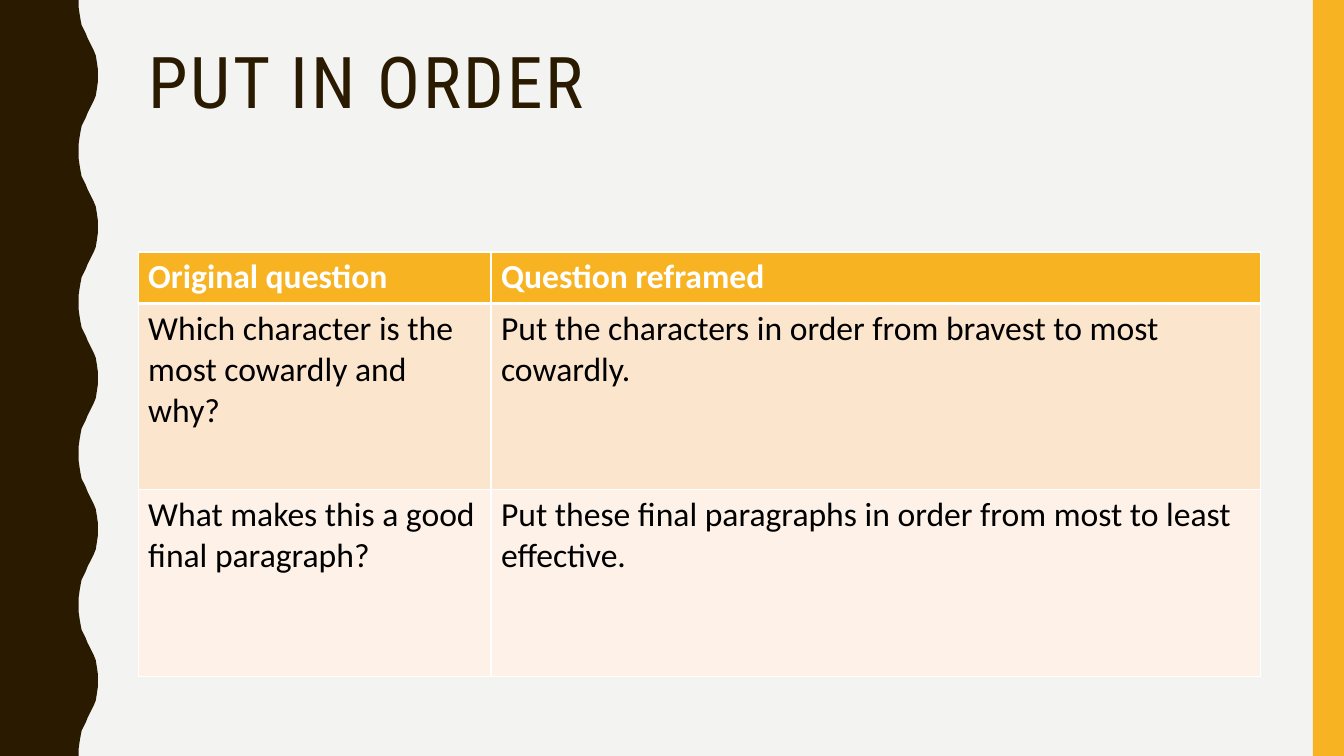
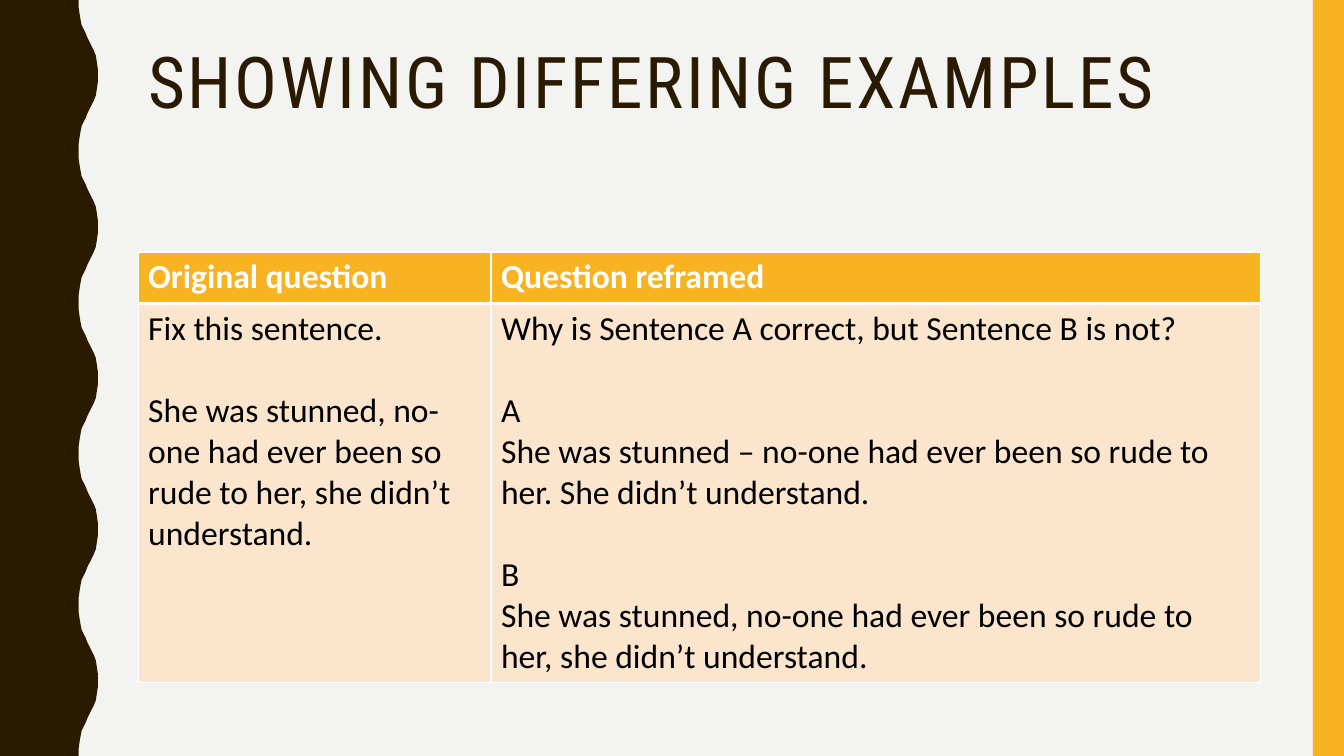
from lxml import etree
from pptx import Presentation, util as u
from pptx.dml.color import RGBColor
from pptx.enum import shapes, text
from pptx.oxml import ns

PX = 9144
WIDTH, HEIGHT = 1333, 750
LEFT, CONTENT_WIDTH = 137, 1113

BROWN = RGBColor(0x2A, 0x1A, 0x00)
AMBER = RGBColor(0xF8, 0xB3, 0x23)
PAPER = RGBColor(0xF3, 0xF3, 0xF2)
PEACH = RGBColor(0xFC, 0xE5, 0xCD)
CREAM = RGBColor(0xFE, 0xF2, 0xE8)
WHITE = RGBColor(0xFF, 0xFF, 0xFF)
BLACK = RGBColor(0x00, 0x00, 0x00)

TITLE_FONT, BODY_FONT = "Roboto Condensed", "Calibri"
GROUP_GAP = 29.3
COLUMN_WIDTHS = [350, 763]
HEADER_HEIGHT = 51
ROW_FILLS = [AMBER, PEACH, CREAM]
HEADER = [[["Original question"]], [["Question reframed"]]]

WAVE_PERIOD = 150
SWELL = [(78, 0), (78, 7), (79, 14), (80, 20), (81, 25), (83, 29), (85, 33), (87, 38),
         (89, 42), (91, 46), (93, 50), (95, 55), (96, 61), (97, 68), (97, 75)]
WAVE = SWELL + [(x, WAVE_PERIOD - y) for x, y in reversed(SWELL[:-1])]
EDGE = [(x, y + top) for top in range(0, HEIGHT, WAVE_PERIOD) for x, y in WAVE]

SLIDES = [
    ("PUT IN ORDER", 185, [
        [[["Which character is the most cowardly and why?"]],
         [["Put the characters in order from bravest to most cowardly."]]],
        [[["What makes this a good final paragraph?"]],
         [["Put these final paragraphs in order from most to least effective."]]],
    ]),
    ("SHOWING DIFFERING EXAMPLES", 376, [
        [[["Fix this sentence."],
          ["She was stunned, no-one had ever been so rude to her, she didn’t understand."]],
         [["Why is Sentence A correct, but Sentence B is not?"],
          ["A", "She was stunned – no-one had ever been so rude to her. She didn’t understand."],
          ["B", "She was stunned, no-one had ever been so rude to her, she didn’t understand."]]],
    ]),
]


def add_run(paragraph, content, font_name, size, color, bold=False):
    run = paragraph.add_run()
    run.text = content
    run.font.name = font_name
    run.font.size = u.Pt(size)
    run.font.color.rgb = color
    run.font.bold = bold
    return run


def style_cell(cell, fill, borders):
    properties = cell._tc.get_or_add_tcPr()
    for side, points in borders.items():
        line = etree.SubElement(properties, ns.qn(f"a:ln{side}"), w=str(u.Pt(points)))
        solid = etree.SubElement(line, ns.qn("a:solidFill"))
        etree.SubElement(solid, ns.qn("a:srgbClr"), val=str(WHITE))
    cell.fill.solid()
    cell.fill.fore_color.rgb = fill


presentation = Presentation()
presentation.slide_width = WIDTH * PX
presentation.slide_height = HEIGHT * PX
background = presentation.slide_master.background.fill
background.solid()
background.fore_color.rgb = PAPER

for title, row_height, body in SLIDES:
    slide = presentation.slides.add_slide(presentation.slide_layouts[6])

    outline = slide.shapes.build_freeform(0, 0, scale=PX)
    outline.add_line_segments(EDGE + [(0, HEIGHT)], close=True)
    wave = outline.convert_to_shape()
    band = slide.shapes.add_shape(
        shapes.MSO_SHAPE.RECTANGLE, 1302 * PX, 0, 31 * PX, HEIGHT * PX)
    for shape, color in [(wave, BROWN), (band, AMBER)]:
        shape.shadow.inherit = False
        shape.fill.solid()
        shape.fill.fore_color.rgb = color
        shape.line.fill.background()

    title_box = slide.shapes.add_textbox(LEFT * PX, 42 * PX, CONTENT_WIDTH * PX, 163 * PX)
    title_box.text_frame.word_wrap = True
    title_box.text_frame.vertical_anchor = text.MSO_ANCHOR.TOP
    paragraph = title_box.text_frame.paragraphs[0]
    paragraph.line_spacing = 0.9
    run = add_run(paragraph, title, TITLE_FONT, 51, BROWN)
    run.font._element.set("spc", "200")

    rows = [HEADER] + body
    heights = [HEADER_HEIGHT] + [row_height] * len(body)
    table = slide.shapes.add_table(
        len(rows), len(COLUMN_WIDTHS), LEFT * PX, 250 * PX,
        CONTENT_WIDTH * PX, sum(heights) * PX).table
    table.first_row = False
    table.horz_banding = False
    for column, width in zip(table.columns, COLUMN_WIDTHS):
        column.width = width * PX

    for row_index, row in enumerate(rows):
        table.rows[row_index].height = heights[row_index] * PX
        is_header = row_index == 0
        borders = {"L": 1, "R": 1, "T": 3 if row_index == 1 else 1, "B": 3 if is_header else 1}
        for column_index, groups in enumerate(row):
            cell = table.cell(row_index, column_index)
            style_cell(cell, ROW_FILLS[row_index], borders)
            paragraph = None
            for group in groups:
                for line_index, content in enumerate(group):
                    if paragraph is None:
                        paragraph = cell.text_frame.paragraphs[0]
                    else:
                        paragraph = cell.text_frame.add_paragraph()
                        if line_index == 0:
                            paragraph.space_before = u.Pt(GROUP_GAP)
                    add_run(paragraph, content, BODY_FONT, 24,
                            WHITE if is_header else BLACK, is_header)

presentation.save("out.pptx")
